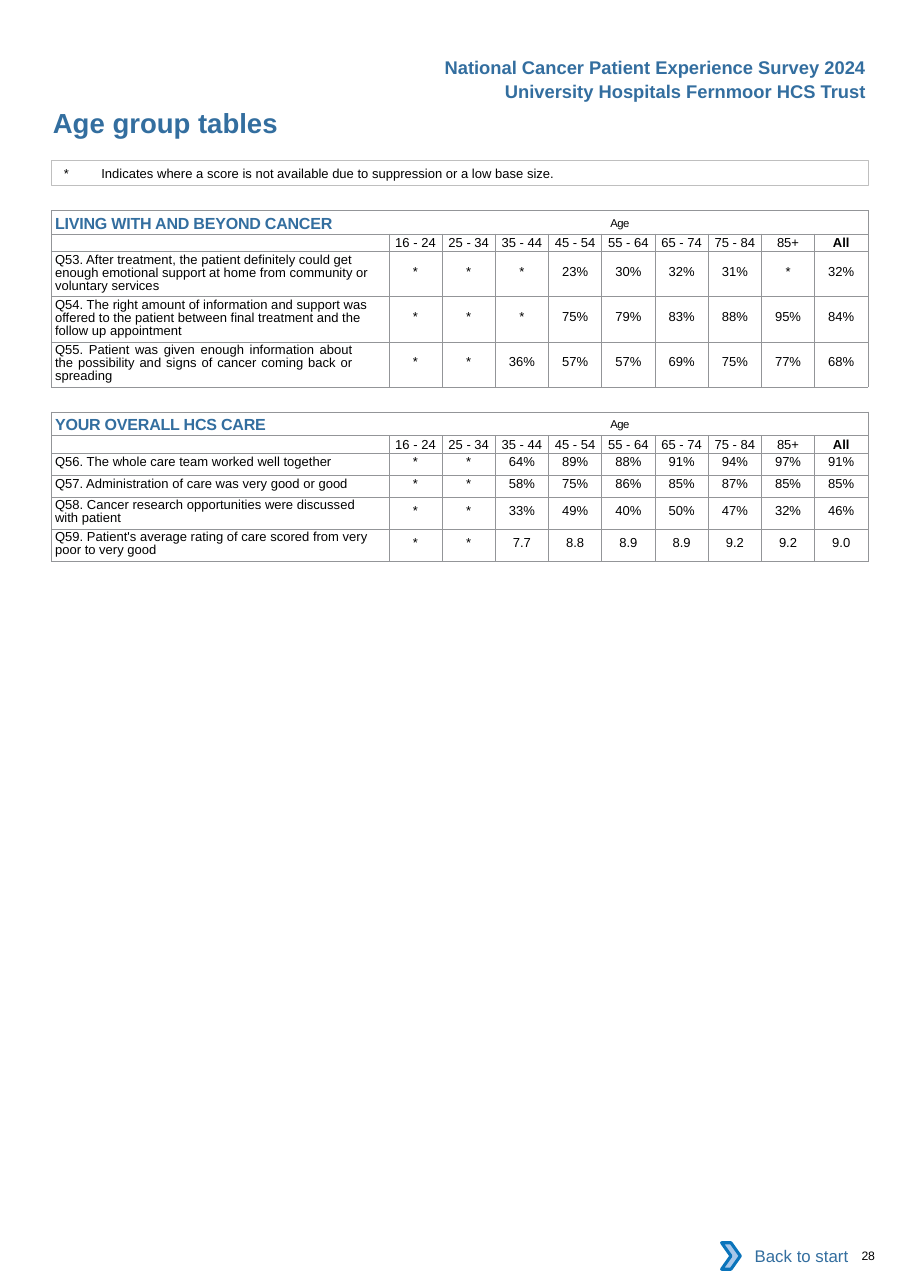
from dataclasses import dataclass
from pptx import Presentation
from pptx.dml.color import RGBColor
from pptx.enum.shapes import MSO_SHAPE
from pptx.enum.text import MSO_ANCHOR, PP_ALIGN
from pptx.oxml.ns import qn
from pptx.util import Inches, Pt
from lxml.etree import SubElement


@dataclass(frozen=True)
class Theme:
    font: str = "Arial"
    blue: RGBColor = RGBColor(0x33, 0x6E, 0x9F)
    black: RGBColor = RGBColor(0, 0, 0)
    white: RGBColor = RGBColor(255, 255, 255)
    grid: RGBColor = RGBColor(0x93, 0x95, 0x98)
    note_edge: RGBColor = RGBColor(0xBF, 0xBF, 0xBF)
    arrow: RGBColor = RGBColor(0xA8, 0xC7, 0xE9)
    arrow_edge: RGBColor = RGBColor(0x0A, 0x74, 0xBB)
    title: float = 18
    survey: float = 12
    heading: float = 10.5
    age: float = 12.8
    link: float = 11
    body: float = 8.5
    page: float = 8
    rule: float = 0.5


THEME = Theme()
LEFT, WIDTH = 0.47, 7.41
QUESTION_WIDTH = 3.06
AGES = ["16 - 24", "25 - 34", "35 - 44", "45 - 54", "55 - 64", "65 - 74", "75 - 84", "85+", "All"]
HEADING_HEIGHT, AGES_HEIGHT = 0.21, 0.16
HEIGHT_BY_LINES = {1: 0.2, 2: 0.29, 3: 0.41}

LIVING = [
    ("Q53. After treatment, the patient definitely could get enough emotional support at home "
     "from community or voluntary services", 3, "* * * 23% 30% 32% 31% * 32%"),
    ("Q54. The right amount of information and support was offered to the patient between final "
     "treatment and the follow up appointment", 3, "* * * 75% 79% 83% 88% 95% 84%"),
    ("Q55. Patient was given enough information about the possibility and signs of cancer coming "
     "back or spreading", 3, "* * 36% 57% 57% 69% 75% 77% 68%"),
]
OVERALL = [
    ("Q56. The whole care team worked well together", 1, "* * 64% 89% 88% 91% 94% 97% 91%"),
    ("Q57. Administration of care was very good or good", 1, "* * 58% 75% 86% 85% 87% 85% 85%"),
    ("Q58. Cancer research opportunities were discussed with patient", 2,
     "* * 33% 49% 40% 50% 47% 32% 46%"),
    ("Q59. Patient's average rating of care scored from very poor to very good", 2,
     "* * 7.7 8.8 8.9 8.9 9.2 9.2 9.0"),
]


def style(run, size, color=THEME.black, bold=False, spacing=0):
    run.font.name = THEME.font
    run.font.size = Pt(size)
    run.font.bold = bold
    run.font.color.rgb = color
    if spacing:
        run.font._element.set("spc", str(spacing))


def write(frame, text, size, color=THEME.black, bold=False, align=PP_ALIGN.LEFT, spacing=0):
    paragraph = frame.paragraphs[0]
    paragraph.text = text
    paragraph.alignment = align
    for run in paragraph.runs:
        style(run, size, color, bold, spacing)
    return paragraph


def set_margins(holder, left=0, top=0, right=0, bottom=0):
    holder.margin_left, holder.margin_top = Inches(left), Inches(top)
    holder.margin_right, holder.margin_bottom = Inches(right), Inches(bottom)


def indent(paragraph, left, tab=None):
    properties = paragraph._p.get_or_add_pPr()
    properties.set("marL", str(Inches(left)))
    if tab:
        stops = SubElement(properties, qn("a:tabLst"))
        SubElement(stops, qn("a:tab"), pos=str(Inches(tab)), algn="l")


def outline(cell):
    properties = cell._tc.get_or_add_tcPr()
    for side in ("a:lnL", "a:lnR", "a:lnT", "a:lnB"):
        edge = SubElement(properties, qn(side), w=str(Pt(THEME.rule)))
        SubElement(SubElement(edge, qn("a:solidFill")), qn("a:srgbClr"), val=str(THEME.grid))
    cell.fill.background()


def add_header(slide, left, top, width):
    lines = ["National Cancer Patient Experience Survey 2024", "University Hospitals Fernmoor HCS Trust"]
    for number, line in enumerate(lines):
        box = slide.shapes.add_textbox(Inches(left), Inches(top + number * 0.22), Inches(width), Inches(0.3))
        box.text_frame.word_wrap = False
        write(box.text_frame, line, THEME.survey, THEME.blue, True, PP_ALIGN.RIGHT)


def add_title(slide, left, top, width, height):
    title = slide.shapes.title
    title.left, title.top = Inches(left), Inches(top)
    title.width, title.height = Inches(width), Inches(height)
    frame = title.text_frame
    set_margins(frame)
    frame.vertical_anchor = MSO_ANCHOR.TOP
    indent(write(frame, "Age group tables", THEME.title, THEME.blue, True), 0.01)


def add_note(slide, left, top, width, height):
    note = slide.shapes.add_shape(
        MSO_SHAPE.RECTANGLE, Inches(left), Inches(top), Inches(width), Inches(height))
    note.shadow.inherit = False
    note.fill.background()
    note.line.color.rgb = THEME.note_edge
    note.line.width = Pt(THEME.rule)
    frame = note.text_frame
    frame.word_wrap = True
    frame.vertical_anchor = MSO_ANCHOR.TOP
    set_margins(frame, top=0.04, bottom=0.04)
    message = write(
        frame, "*\tIndicates where a score is not available due to suppression or a low base size.", THEME.body)
    indent(message, 0.11, 0.34)


def add_question(cell, question, lines):
    justified = question.startswith("Q55")
    set_margins(cell, top=0.01 if lines == 1 else 0.02, right=0.33 if justified else 0.15)
    paragraph = write(cell.text_frame, question, THEME.body,
                      align=PP_ALIGN.JUSTIFY if justified else PP_ALIGN.LEFT)
    if lines > 1:
        paragraph.line_spacing = Pt(8.6)
    indent(paragraph, 0.03)


def add_scores(slide, left, top, width, heading, questions):
    heights = [HEADING_HEIGHT, AGES_HEIGHT] + [HEIGHT_BY_LINES[lines] for _, lines, _ in questions]
    scores = slide.shapes.add_table(
        len(heights), len(AGES) + 1, Inches(left), Inches(top), Inches(width), Inches(sum(heights))).table
    scores.first_row = scores.horz_banding = False
    for column in scores.columns:
        column.width = Inches((width - QUESTION_WIDTH) / len(AGES))
    scores.columns[0].width = Inches(QUESTION_WIDTH)
    for row, height in zip(scores.rows, heights):
        row.height = Inches(height)
    for cell in scores.iter_cells():
        set_margins(cell)
        outline(cell)
        cell.text_frame.paragraphs[0]._p.get_or_add_endParaRPr().set("sz", str(int(THEME.body * 100)))

    banner = scores.cell(0, 0)
    banner.merge(scores.cell(0, len(AGES)))
    banner.vertical_anchor = MSO_ANCHOR.MIDDLE
    caption = write(banner.text_frame, heading + "\t", THEME.heading, THEME.blue, True, spacing=-10)
    age = caption.add_run()
    age.text = "Age"
    style(age, THEME.age, spacing=-40)
    age.font._element.set("baseline", "10000")
    indent(caption, 0.03, 5.04)

    for column, group in enumerate(AGES, 1):
        cell = scores.cell(1, column)
        cell.vertical_anchor = MSO_ANCHOR.MIDDLE
        label = write(cell.text_frame, group, THEME.body, bold=group == "All", align=PP_ALIGN.CENTER)
        label.line_spacing = Pt(9.9)

    for row, (question, lines, values) in enumerate(questions, 2):
        add_question(scores.cell(row, 0), question, lines)
        for column, value in enumerate(values.split(), 1):
            cell = scores.cell(row, column)
            set_margins(cell, top=(heights[row] - 0.17) / 2)
            write(cell.text_frame, value, THEME.body, align=PP_ALIGN.CENTER)


def add_footer(slide, left, top):
    link = slide.shapes.add_group_shape()
    label = link.shapes.add_shape(
        MSO_SHAPE.RECTANGLE, Inches(left + 0.07), Inches(top), Inches(1.18), Inches(0.42))
    label.fill.solid()
    label.fill.fore_color.rgb = THEME.white
    label.line.fill.background()
    label.text_frame.vertical_anchor = MSO_ANCHOR.MIDDLE
    write(label.text_frame, "Back to start", THEME.link, THEME.blue, align=PP_ALIGN.RIGHT)
    arrow = link.shapes.add_shape(
        MSO_SHAPE.CHEVRON, Inches(left), Inches(top + 0.09), Inches(0.17), Inches(0.24))
    arrow.fill.solid()
    arrow.fill.fore_color.rgb = THEME.arrow
    arrow.line.color.rgb = THEME.arrow_edge
    arrow.line.width = Pt(2)
    for part in (label, arrow):
        part.shadow.inherit = False
    page = slide.shapes.add_textbox(Inches(left + 1.17), Inches(top + 0.14), Inches(0.51), Inches(0.13))
    page.text_frame.word_wrap = True
    set_margins(page.text_frame)
    indent(write(page.text_frame, "28", THEME.page, spacing=-20), 0.1)


def main():
    deck = Presentation()
    deck.slide_width, deck.slide_height = Inches(8.26), Inches(11.69)
    slide = deck.slides.add_slide(deck.slide_layouts[5])
    add_header(slide, 3.92, 0.46, 4.04)
    add_title(slide, LEFT, 0.96, 4.13, 0.3)
    add_note(slide, LEFT, 1.46, WIDTH, 0.22)
    add_scores(slide, LEFT, 1.91, WIDTH, "LIVING WITH AND BEYOND CANCER", LIVING)
    add_scores(slide, LEFT, 3.74, WIDTH, "YOUR OVERALL HCS CARE", OVERALL)
    add_footer(slide, 6.55, 11.19)
    deck.save("out.pptx")


if __name__ == "__main__":
    main()
